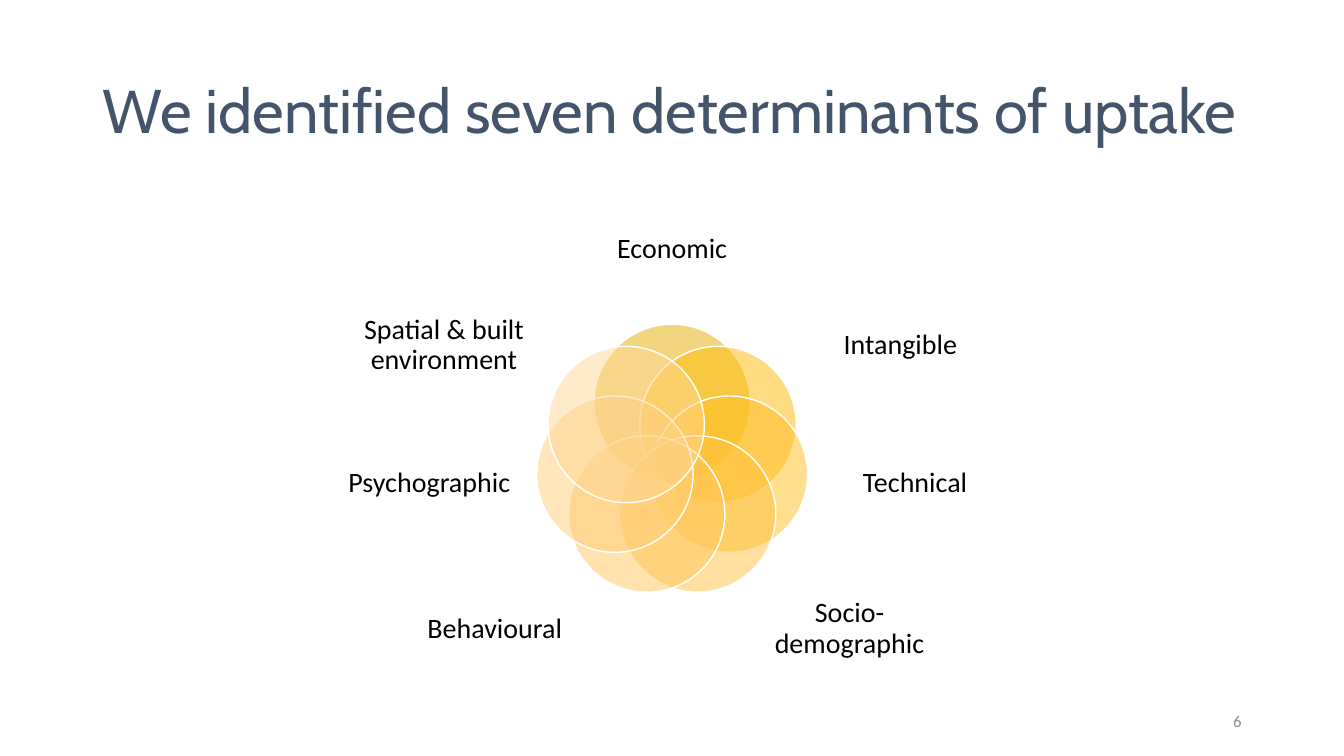
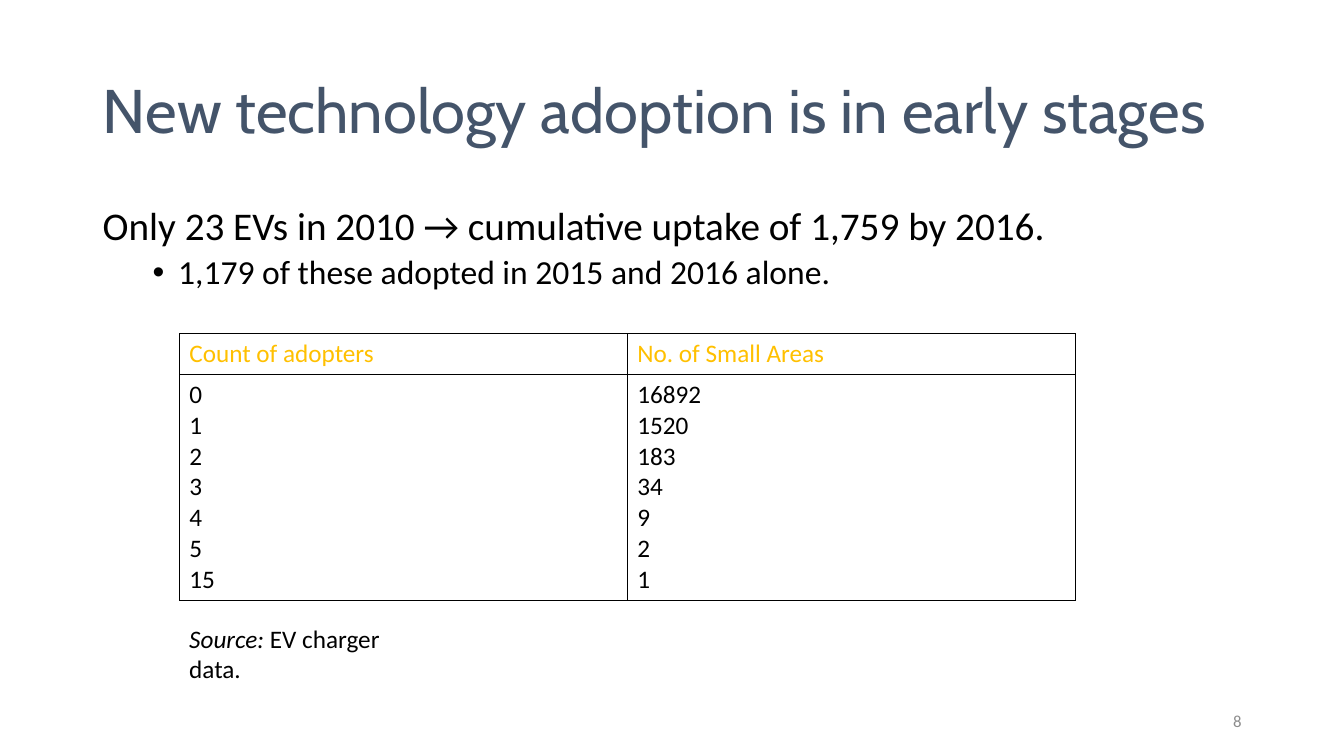
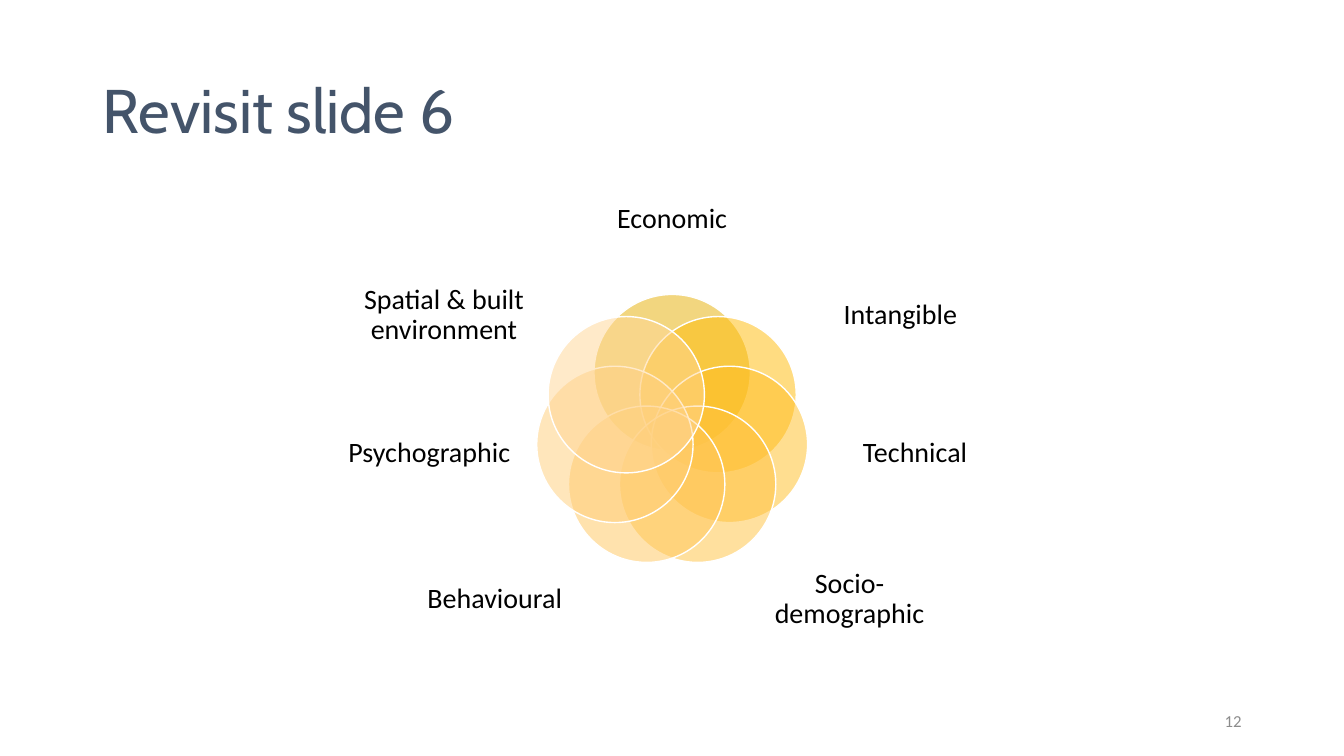
from math import cos, radians, sin

from lxml import etree
from pptx import Presentation
from pptx.dml.color import RGBColor
from pptx.enum.shapes import MSO_SHAPE
from pptx.enum.text import MSO_ANCHOR, MSO_AUTO_SIZE, PP_ALIGN
from pptx.oxml.ns import qn
from pptx.util import Cm, Pt

TITLE_FONT, BODY_FONT = "Cabin", "Calibri"
SLATE, BLACK, WHITE, GREY, GOLD = "44546A", "000000", "FFFFFF", "8C8C8C", "FFC000"

TITLE_ONLY = 5
MARGIN, CONTENT_WIDTH = 2.34, 29.2
TABLE_LEFT = 4.52

HUB_X, RING_RADIUS, CIRCLE_SIZE = 16.94, 1.48, 3.94
# Name, circle colour, label centre from the hub (x, y), label size
DETERMINANTS = [
    ("Economic", "E7AE00", (0, -5.33), (4.52, 2.41)),
    ("Intangible", "FFBB05", (5.75, -2.92), (4.27, 2.67)),
    ("Technical", "FFBE22", (6.12, 0.55), (4.19, 2.84)),
    ("Socio-demographic", "FFC23F", (4.47, 4.23), (4.52, 2.59)),
    ("Behavioural", "FFC75C", (-4.47, 4.23), (4.52, 2.59)),
    ("Psychographic", "FFCE78", (-6.12, 0.55), (4.19, 2.84)),
    ("Spatial & built environment", "FFD695", (-5.75, -2.92), (4.27, 2.67)),
]

ADOPTERS = [
    ("0", "16892"),
    ("1", "1520"),
    ("2", "183"),
    ("3", "34"),
    ("4", "9"),
    ("5", "2"),
    ("15", "1"),
]


def rgb(hex_colour):
    return RGBColor.from_string(hex_colour)


def format_runs(paragraph, size, colour=BLACK, font=BODY_FONT):
    for run in paragraph.runs:
        run.font.size = Pt(size)
        run.font.name = font
        run.font.color.rgb = rgb(colour)


def add_text(shapes, box, text, size, colour=BLACK, align=PP_ALIGN.LEFT,
             anchor=MSO_ANCHOR.TOP):
    """Add a wrapping text box; box is left, top, width, height in cm."""
    frame = shapes.add_textbox(*map(Cm, box)).text_frame
    frame.word_wrap = True
    frame.vertical_anchor = anchor
    frame.text = text
    for paragraph in frame.paragraphs:
        paragraph.alignment = align
        format_runs(paragraph, size, colour)
    return frame


def add_titled_slide(deck, title_text, number):
    slide = deck.slides.add_slide(deck.slide_layouts[TITLE_ONLY])
    title = slide.shapes.title
    title.left, title.top = Cm(MARGIN), Cm(1.02)
    title.width, title.height = Cm(CONTENT_WIDTH), Cm(3.68)
    frame = title.text_frame
    frame.text = title_text
    frame.word_wrap = True
    frame.auto_size = MSO_AUTO_SIZE.NONE
    frame.vertical_anchor = MSO_ANCHOR.MIDDLE
    heading = frame.paragraphs[0]
    heading.alignment = PP_ALIGN.LEFT
    heading.line_spacing = 0.9
    format_runs(heading, 44, SLATE, TITLE_FONT)
    add_text(slide.shapes, (23.92, 17.65, 7.62, 1.01), str(number), 12, GREY,
             PP_ALIGN.RIGHT, MSO_ANCHOR.MIDDLE)
    return slide


def add_petal(shapes, centre_x, centre_y, colour):
    """Add one half-transparent circle of the ring."""
    petal = shapes.add_shape(
        MSO_SHAPE.OVAL, Cm(centre_x - CIRCLE_SIZE / 2),
        Cm(centre_y - CIRCLE_SIZE / 2), Cm(CIRCLE_SIZE), Cm(CIRCLE_SIZE))
    petal.shadow.inherit = False
    petal.fill.solid()
    petal.fill.fore_color.rgb = rgb(colour)
    fill_colour = petal.element.spPr.find(qn("a:solidFill")).find(qn("a:srgbClr"))
    etree.SubElement(fill_colour, qn("a:alpha"), val="50000")
    petal.line.color.rgb = rgb(WHITE)
    petal.line.width = Pt(1)


def add_petal_label(shapes, centre_x, centre_y, size, text):
    width, height = size
    box = (centre_x - width / 2, centre_y - height / 2, width, height)
    frame = add_text(shapes, box, text, 20, BLACK, PP_ALIGN.CENTER,
                     MSO_ANCHOR.MIDDLE)
    frame.margin_left = frame.margin_right = 0
    frame.margin_top = frame.margin_bottom = 0
    frame.paragraphs[0].line_spacing = 0.9


def add_determinants(slide, hub_y):
    """Draw the ring of overlapping circles, clockwise from the top."""
    shapes = slide.shapes.add_group_shape().shapes
    for index, (name, colour, (dx, dy), size) in enumerate(DETERMINANTS):
        angle = radians(360 / len(DETERMINANTS) * index)
        add_petal(shapes, HUB_X + RING_RADIUS * sin(angle),
                  hub_y - RING_RADIUS * cos(angle), colour)
        add_petal_label(shapes, HUB_X + dx, hub_y + dy, size, name)


def add_uptake_summary(slide):
    frame = add_text(slide.shapes, (MARGIN, 5.08, CONTENT_WIDTH, 3),
                     "Only 23 EVs in 2010 → cumulative uptake of 1,759 by 2016.", 28)
    summary, detail = frame.paragraphs[0], frame.add_paragraph()
    detail.text = "1,179 of these adopted in 2015 and 2016 alone."
    detail.level = 1
    format_runs(detail, 24)
    for paragraph, space in ((summary, 10), (detail, 5)):
        paragraph.line_spacing = 0.9
        paragraph.space_before = Pt(space)
    properties = detail._p.get_or_add_pPr()
    properties.set("marL", str(Cm(1.9)))
    properties.set("indent", str(Cm(-0.64)))
    etree.SubElement(properties, qn("a:buFont"), typeface="Arial")
    etree.SubElement(properties, qn("a:buChar"), char="•")


def add_cell_borders(cell):
    properties = cell._tc.get_or_add_tcPr()
    for side in ("lnL", "lnR", "lnT", "lnB"):
        border = etree.SubElement(properties, qn(f"a:{side}"), w=str(Pt(0.25)))
        fill = etree.SubElement(border, qn("a:solidFill"))
        etree.SubElement(fill, qn("a:srgbClr"), val=BLACK)


def add_adopter_table(slide):
    """Add a header row over one row that holds the whole list of counts."""
    table = slide.shapes.add_table(
        2, 2, Cm(TABLE_LEFT), Cm(8.4), Cm(22.58), Cm(6.73)).table
    table.first_row = table.horz_banding = False
    table.rows[0].height, table.rows[1].height = Cm(1.04), Cm(5.69)
    counts = ["\n".join(column) for column in zip(*ADOPTERS)]
    rows = [(("Count of adopters", "No. of Small Areas"), GOLD), (counts, BLACK)]
    for row, (texts, colour) in enumerate(rows):
        for column, text in enumerate(texts):
            cell = table.cell(row, column)
            add_cell_borders(cell)
            cell.fill.background()
            cell.text_frame.text = text
            for paragraph in cell.text_frame.paragraphs:
                format_runs(paragraph, 18, colour)


def add_source_line(slide):
    frame = add_text(slide.shapes, (TABLE_LEFT, 15.57, 6.53, 1.02), "Source: ", 18)
    frame.word_wrap = False
    frame.auto_size = MSO_AUTO_SIZE.SHAPE_TO_FIT_TEXT
    line = frame.paragraphs[0]
    line.runs[0].font.italic = True
    line.add_run().text = "EV charger data."
    format_runs(line, 18)


def main():
    deck = Presentation()
    deck.slide_width, deck.slide_height = Cm(33.87), Cm(19.05)

    determinants = add_titled_slide(
        deck, "We identified seven determinants of uptake", 6)
    add_determinants(determinants, 11.62)

    adoption = add_titled_slide(
        deck, "New technology adoption is in early stages", 8)
    add_uptake_summary(adoption)
    add_adopter_table(adoption)
    add_source_line(adoption)

    revisit = add_titled_slide(deck, "Revisit slide 6", 12)
    add_determinants(revisit, 10.87)

    deck.save("out.pptx")


if __name__ == "__main__":
    main()
